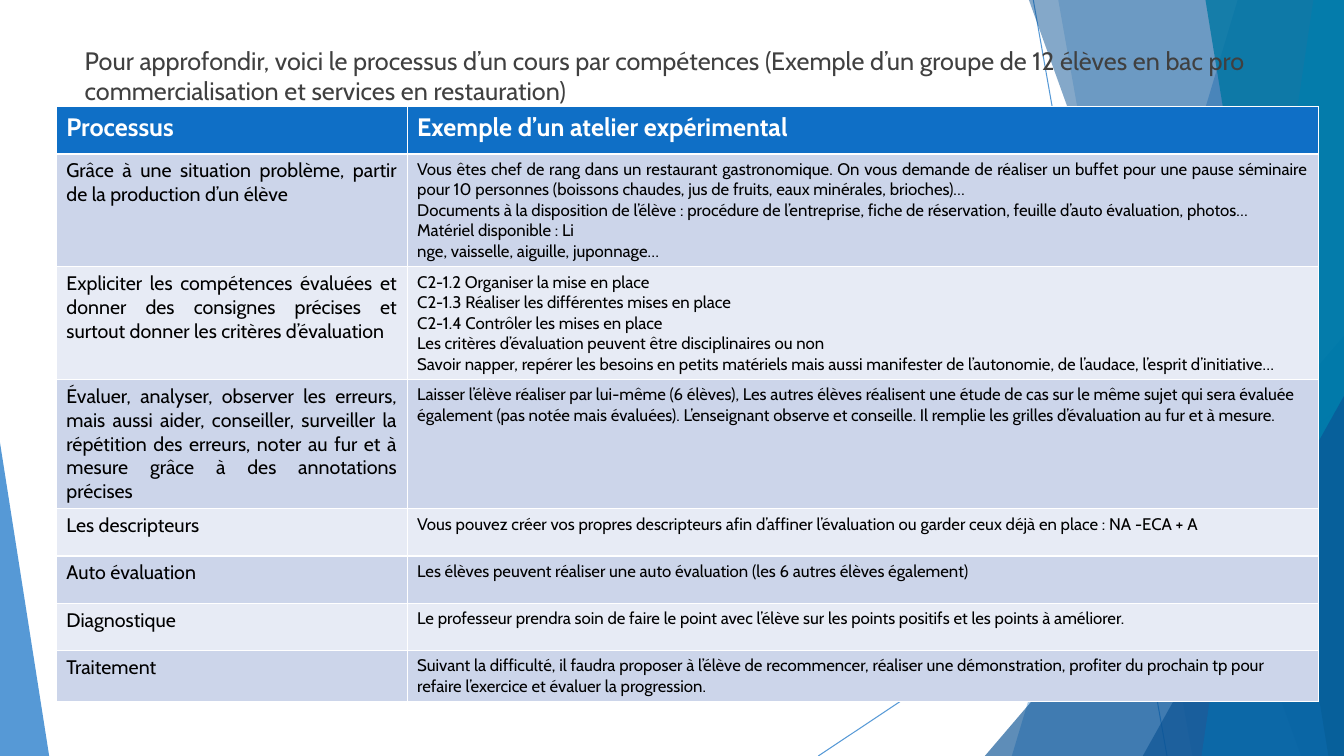
"""Build the slide on the steps of a skills-based lesson."""
from lxml.etree import SubElement
from pptx import Presentation
from pptx.dml.color import RGBColor as Rgb
from pptx.enum.shapes import MSO_CONNECTOR as Link, MSO_SHAPE as Form
from pptx.enum.text import MSO_ANCHOR as Anchor, MSO_AUTO_SIZE as Fit, PP_ALIGN as Align
from pptx.oxml.ns import qn
from pptx.util import Cm, Pt

WIDE, HIGH = 33.87, 19.05
INK = {
    "blue": "0F6FC6", "navy": "0B5394", "sky": "009DD9", "teal": "0076A3",
    "gray": "404040", "black": "000000", "white": "FFFFFF",
    "odd": "CCD5EA", "even": "E7EBF5",
}


def write(frame, text, size, color="black", bold=False, align=Align.LEFT, before=0):
    frame.text = text
    for para in frame.paragraphs:
        para.alignment = align
        para.space_before = Pt(before)
        para.line_spacing = 1.0
        font = para.runs[0].font
        font.name, font.size, font.bold = "Cabin", Pt(size), bold
        font.color.rgb = Rgb.from_string(INK[color])


def tint(shape, fill, color, alpha):
    fill.solid()
    fill.fore_color.rgb = Rgb.from_string(INK[color])
    for node in shape.element.spPr.iter(qn("a:srgbClr")):
        SubElement(node, qn("a:alpha"), val=str(alpha * 1000))


deck = Presentation()
deck.slide_width, deck.slide_height = Cm(WIDE), Cm(HIGH)
slide = deck.slides.add_slide(deck.slide_layouts[5])
shapes = slide.shapes
title = shapes.title

for ends in [(26.04, 0, 29.41, HIGH), (WIDE, 10.24, 20.62, HIGH)]:
    line = shapes.add_connector(Link.STRAIGHT, *map(Cm, ends))
    line.line.width = Pt(0.75)
    tint(line, line.line.fill, "blue", 70)
    SubElement(line.element.spPr, qn("a:effectLst"))

facets = [
    ("band", (31.19, 25.5), "blue", 36),
    ("band", (26.67, 30.05), "blue", 20),
    ("peak", (24.82, 8.46, 9.05, 1), "navy", 66),
    ("band", (25.93, 32.79), "navy", 50),
    ("band", (33.1, 30.28), "sky", 70),
    ("band", (30.38, 33.48), "teal", 80),
    ("peak", (28.8, 9.98, 5.07, 1), "navy", 66),
    ("peak", (0, 11.15, 1.24, 0), "blue", 70),
]
for kind, place, color, alpha in facets:
    if kind == "band":
        top, base = place
        path = shapes.build_freeform(Cm(top), 0)
        path.add_line_segments(
            [(Cm(WIDE), 0), (Cm(WIDE), Cm(HIGH)), (Cm(base), Cm(HIGH))], close=True)
        facet = path.convert_to_shape()
    else:
        left, top, width, tip = place
        facet = shapes.add_shape(
            Form.ISOSCELES_TRIANGLE, Cm(left), Cm(top), Cm(width), Cm(HIGH - top))
        facet.adjustments[0] = tip
    facet.shadow.inherit = False
    facet.line.fill.background()
    tint(facet, facet.fill, color, alpha)

shapes.element.append(title.element)
title.left, title.top, title.width, title.height = map(Cm, (1.88, 1.02, 31.34, 15.77))
write(title.text_frame,
      "Pour approfondir, voici le processus d’un cours par compétences (Exemple d’un "
      "groupe de 12 élèves en bac pro commercialisation et services en restauration)",
      size=18, color="gray", before=10)
title.text_frame.vertical_anchor = Anchor.TOP
title.text_frame.auto_size = Fit.NONE
title.text_frame.word_wrap = True

steps = [
    ("Processus", "Exemple d’un atelier expérimental"),
    ("Grâce à une situation problème, partir de la production d’un élève",
     "Vous êtes chef de rang dans un restaurant gastronomique. On vous demande de "
     "réaliser un buffet pour une pause séminaire pour 10 personnes (boissons chaudes, "
     "jus de fruits, eaux minérales, brioches)…\n"
     "Documents à la disposition de l’élève : procédure de l’entreprise, fiche de "
     "réservation, feuille d’auto évaluation, photos…\n"
     "Matériel disponible : Li\n"
     "nge, vaisselle, aiguille, juponnage…"),
    ("Expliciter les compétences évaluées et donner des consignes précises et surtout "
     "donner les critères d’évaluation",
     "C2-1.2 Organiser la mise en place\n"
     "C2-1.3 Réaliser les différentes mises en place\n"
     "C2-1.4 Contrôler les mises en place\n"
     "Les critères d’évaluation peuvent être disciplinaires ou non\n"
     "Savoir napper, repérer les besoins en petits matériels mais aussi manifester de "
     "l’autonomie, de l’audace, l’esprit d’initiative…"),
    ("Évaluer, analyser, observer les erreurs, mais aussi aider, conseiller, surveiller "
     "la répétition des erreurs, noter au fur et à mesure grâce à des annotations précises",
     "Laisser l’élève réaliser par lui-même (6 élèves), Les autres élèves réalisent une "
     "étude de cas sur le même sujet qui sera évaluée également (pas notée mais "
     "évaluées). L’enseignant observe et conseille. Il remplie les grilles d’évaluation "
     "au fur et à mesure."),
    ("Les descripteurs",
     "Vous pouvez créer vos propres descripteurs afin d’affiner l’évaluation ou garder "
     "ceux déjà en place : NA -ECA + A"),
    ("Auto évaluation",
     "Les élèves peuvent réaliser une auto évaluation (les 6 autres élèves également)"),
    ("Diagnostique",
     "Le professeur prendra soin de faire le point avec l’élève sur les points positifs "
     "et les points à améliorer."),
    ("Traitement",
     "Suivant la difficulté, il faudra proposer à l’élève de recommencer, réaliser une "
     "démonstration, profiter du prochain tp pour refaire l’exercice et évaluer la "
     "progression."),
]
sizes = (14, 12)
last = (3, 1)
table = shapes.add_table(
    len(steps), 2, Cm(1.42), Cm(2.69), Cm(31.81), Cm(1.19 * len(steps))).table
table.columns[0].width, table.columns[1].width = Cm(8.84), Cm(22.97)
for row, step in enumerate(steps):
    table.rows[row].height = Cm(1.19)
    for col, text in enumerate(step):
        cell = table.cell(row, col)
        cell.fill.solid()
        if row == 0:
            shade = "blue"
            write(cell.text_frame, text, size=18, color="white", bold=True)
        else:
            shade = "odd" if row % 2 else "even"
            align = Align.JUSTIFY if row <= last[col] else Align.LEFT
            write(cell.text_frame, text, size=sizes[col], align=align)
        cell.fill.fore_color.rgb = Rgb.from_string(INK[shade])

deck.save("out.pptx")
